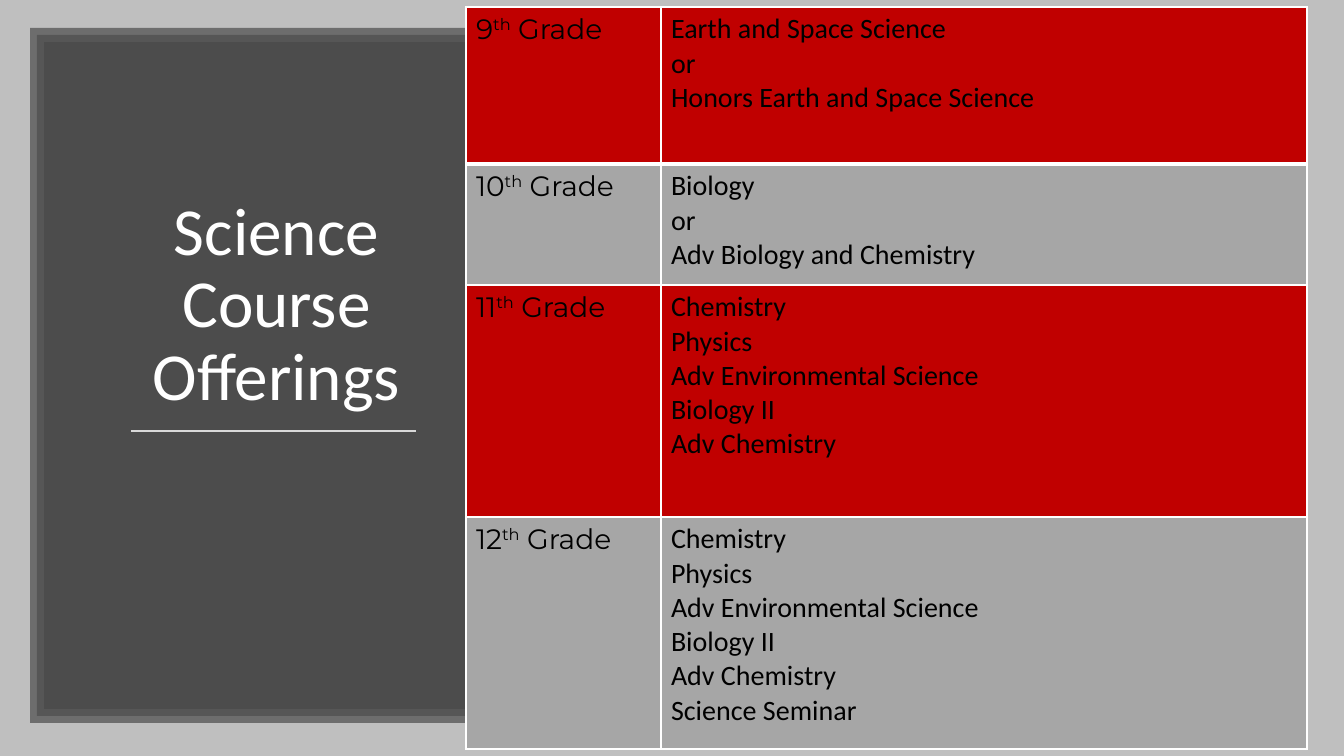
"""Build the science course offerings slide."""
from dataclasses import dataclass

import lxml.etree
import pptx
import pptx.dml.color
import pptx.enum.shapes
import pptx.enum.text
import pptx.oxml
import pptx.oxml.ns
import pptx.util

TITLE = "Science Course Offerings"
OFFERINGS = [
    ("9", ["Earth and Space Science", "or", "Honors Earth and Space Science"]),
    ("10", ["Biology", "or", "Adv Biology and Chemistry"]),
    ("11", ["Chemistry", "Physics", "Adv Environmental Science", "Biology II",
            "Adv Chemistry"]),
    ("12", ["Chemistry", "Physics", "Adv Environmental Science", "Biology II",
            "Adv Chemistry", "Science Seminar"]),
]

SLIDE = (1344, 756)
PANEL_BOX = (37, 35, 478, 681)
TITLE_BOX = (75, 101, 403, 319)
RULE = (131, 431, 416, 431)
TABLE_AT = (466, 7)
COL_WIDTHS = (195, 646)
ROW_HEIGHTS = (157, 121, 232, 232)


@dataclass(frozen=True)
class Theme:
    background: str = "BFBFBF"
    panel: str = "404040"
    panel_line: str = "595959"
    rule: str = "D9D9D9"
    light: str = "FFFFFF"
    dark: str = "000000"
    rows: tuple = ("C00000", "A6A6A6")
    body_font: str = "Calibri"
    grade_font: str = "Montserrat"
    title_size: int = 48
    table_size: int = 20


THEME = Theme()
qn = pptx.oxml.ns.qn


def px(n):
    return round(n * 914400 / 100.8)


def rgb(value):
    return pptx.dml.color.RGBColor.from_string(value)


def paint(fill, color):
    fill.solid()
    fill.fore_color.rgb = rgb(color)


def set_alpha(fill_parent, percent):
    color = fill_parent.find(qn("a:solidFill"))[0]
    lxml.etree.SubElement(color, qn("a:alpha"), val=str(percent * 1000))


def line_xml(tag, color, points):
    return pptx.oxml.parse_xml(
        f'<a:{tag} {pptx.oxml.ns.nsdecls("a")} w="{round(points * 12700)}">'
        f'<a:solidFill><a:srgbClr val="{color}"/></a:solidFill></a:{tag}>')


def style_run(r, font, size, color):
    r.font.name = font
    r.font.size = pptx.util.Pt(size)
    r.font.color.rgb = rgb(color)


def add_panel(slide):
    sp = slide.shapes.add_shape(
        pptx.enum.shapes.MSO_SHAPE.RECTANGLE, *map(px, PANEL_BOX))
    sp.shadow.inherit = False
    paint(sp.fill, THEME.panel)
    set_alpha(sp._element.spPr, 90)
    paint(sp.line.fill, THEME.panel_line)
    sp.line.width = pptx.util.Pt(10)
    ln = sp._element.spPr.find(qn("a:ln"))
    set_alpha(ln, 80)
    lxml.etree.SubElement(ln, qn("a:miter"), lim="800000")


def add_title(slide):
    sp = slide.shapes.title
    sp.left, sp.top, sp.width, sp.height = map(px, TITLE_BOX)
    tf = sp.text_frame
    tf.text = TITLE
    tf.word_wrap = True
    tf.auto_size = pptx.enum.text.MSO_AUTO_SIZE.NONE
    tf.vertical_anchor = pptx.enum.text.MSO_ANCHOR.BOTTOM
    p = tf.paragraphs[0]
    p.alignment = pptx.enum.text.PP_ALIGN.CENTER
    p.line_spacing = 0.9
    style_run(p.runs[0], THEME.body_font, THEME.title_size, THEME.light)


def add_rule(slide):
    line = slide.shapes.add_connector(
        pptx.enum.shapes.MSO_CONNECTOR.STRAIGHT, *map(px, RULE))
    line.line.color.rgb = rgb(THEME.rule)
    line.line.width = pptx.util.Pt(1.75)
    lxml.etree.SubElement(line._element.spPr, qn("a:effectLst"))


def fill_grade(cell, grade):
    p = cell.text_frame.paragraphs[0]
    for text in (grade, "th", " Grade"):
        r = p.add_run()
        r.text = text
        style_run(r, THEME.grade_font, THEME.table_size, THEME.dark)
    p.runs[1]._r.get_or_add_rPr().set("baseline", "30000")


def fill_courses(cell, courses):
    cell.text_frame.text = "\n".join(courses)
    for p in cell.text_frame.paragraphs:
        r = p.runs[0]
        style_run(r, THEME.body_font, THEME.table_size, THEME.dark)
        r._r.get_or_add_rPr().insert(0, line_xml("ln", THEME.dark, 0.75))


def style_cell(cell, row):
    tcPr = cell._tc.get_or_add_tcPr()
    widths = {"lnL": 1, "lnR": 1, "lnT": 3 if row == 1 else 1,
              "lnB": 3 if row == 0 else 1}
    for tag, points in widths.items():
        tcPr.append(line_xml(tag, THEME.light, points))
    paint(cell.fill, THEME.rows[row % 2])


def add_offerings(slide):
    size = (sum(COL_WIDTHS), sum(ROW_HEIGHTS))
    table = slide.shapes.add_table(
        len(OFFERINGS), 2, *map(px, TABLE_AT + size)).table
    table.first_row = table.horz_banding = False
    for col, width in zip(table.columns, COL_WIDTHS):
        col.width = px(width)
    for i, (grade, courses) in enumerate(OFFERINGS):
        table.rows[i].height = px(ROW_HEIGHTS[i])
        fill_grade(table.cell(i, 0), grade)
        fill_courses(table.cell(i, 1), courses)
        for cell in table.rows[i].cells:
            style_cell(cell, i)


def main():
    prs = pptx.Presentation()
    prs.slide_width, prs.slide_height = map(px, SLIDE)
    slide = prs.slides.add_slide(prs.slide_layouts[5])
    paint(slide.background.fill, THEME.background)
    add_panel(slide)
    add_title(slide)
    slide.shapes._spTree.append(slide.shapes.title._element)
    add_rule(slide)
    add_offerings(slide)
    prs.save("out.pptx")


if __name__ == "__main__":
    main()
